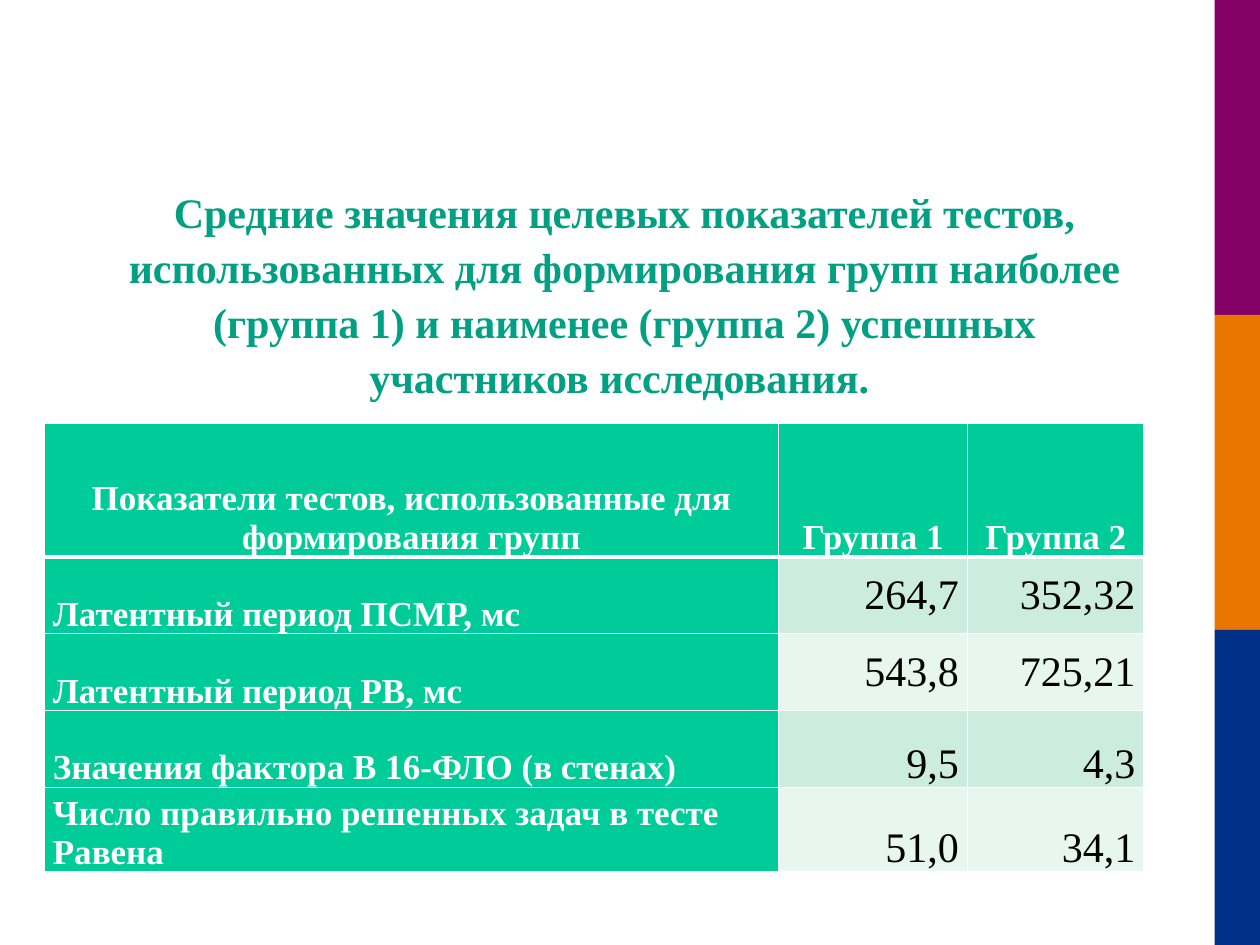
from lxml import etree
from pptx import Presentation
from pptx import util as u
from pptx.dml.color import RGBColor
from pptx.enum import shapes, text
from pptx.oxml.ns import qn

WIDTH, HEIGHT = u.Inches(10), u.Inches(7.5)
FONT = "Times New Roman"
COLORS = {
    "plum": "830065", "orange": "EA7600", "navy": "003087",
    "title": "02A082", "header": "00CC99", "odd": "CBECDE", "even": "E7F6EF",
    "white": "FFFFFF", "black": "000000",
}
TITLE = ("Средние значения целевых показателей тестов, использованных для "
         "формирования групп наиболее (группа 1) и наименее (группа 2) "
         "успешных участников исследования. ")
ROWS = [
    ("Показатели тестов, использованные для формирования групп", "Группа 1", "Группа 2"),
    ("Латентный период ПCМР, мс", "264,7", "352,32"),
    ("Латентный период РВ, мс", "543,8", "725,21"),
    ("Значения фактора В 16-ФЛО (в стенах)", "9,5", "4,3"),
    ("Число правильно решенных задач в тесте Равена", "51,0", "34,1"),
]
COLUMN_WIDTHS = [5.83, 1.5, 1.4]
ROW_HEIGHTS = [1.06, 0.61, 0.61, 0.61, 0.67]


def rgb(name):
    return RGBColor.from_string(COLORS[name])


def style(para, size, color, bold, align):
    para.alignment = align
    font = para.font
    font.name, font.size, font.bold = FONT, u.Pt(size), bold
    font.color.rgb = rgb(color)


def add_side_bands(page):
    left, band = int(WIDTH * 0.964), HEIGHT // 3
    for index, color in enumerate(("plum", "orange", "navy")):
        shape = page.shapes.add_shape(shapes.MSO_SHAPE.RECTANGLE,
                                      left, index * band, WIDTH - left, band)
        shape.shadow.inherit = False
        shape.fill.solid()
        shape.fill.fore_color.rgb = rgb(color)
        shape.line.fill.background()


def add_title(page):
    box = page.shapes.add_textbox(u.Inches(0.93), u.Inches(1.57),
                                  u.Inches(8.15), u.Inches(1.67))
    frame = box.text_frame
    frame.word_wrap = True
    frame.vertical_anchor = text.MSO_ANCHOR.BOTTOM
    frame.margin_left = 0
    para = frame.paragraphs[0]
    para.text = TITLE
    para.line_spacing = 1.09
    style(para, 24, "title", True, text.PP_ALIGN.CENTER)


def set_borders(cell, row):
    # The rule under the header row is heavier than the others
    widths = {"lnL": 1, "lnR": 1, "lnT": 3 if row == 1 else 1, "lnB": 3 if row == 0 else 1}
    properties = cell._tc.get_or_add_tcPr()
    for index, (side, width) in enumerate(widths.items()):
        line = etree.Element(qn(f"a:{side}"), w=str(u.Pt(width)))
        fill = etree.SubElement(line, qn("a:solidFill"))
        etree.SubElement(fill, qn("a:srgbClr"), val=COLORS["white"])
        properties.insert(index, line)


def fill_cell(cell, content, row, column):
    heading = row == 0 or column == 0
    cell.margin_left = cell.margin_right = u.Inches(0.07)
    cell.margin_top = cell.margin_bottom = 0
    middle = not heading and row < 3
    cell.vertical_anchor = text.MSO_ANCHOR.MIDDLE if middle else text.MSO_ANCHOR.BOTTOM
    cell.fill.solid()
    cell.fill.fore_color.rgb = rgb("header" if heading else "odd" if row % 2 else "even")
    set_borders(cell, row)
    para = cell.text_frame.paragraphs[0]
    para.text = content
    if heading:
        align = text.PP_ALIGN.LEFT if row else text.PP_ALIGN.CENTER
        style(para, 20, "white", True, align)
    else:
        style(para, 24, "black", False, text.PP_ALIGN.RIGHT)


def add_results_table(page):
    frame = page.shapes.add_table(len(ROWS), len(COLUMN_WIDTHS),
                                  u.Inches(0.35), u.Inches(3.36),
                                  u.Inches(sum(COLUMN_WIDTHS)), u.Inches(sum(ROW_HEIGHTS)))
    table = frame.table
    for column, width in zip(table.columns, COLUMN_WIDTHS):
        column.width = u.Inches(width)
    for row, height in zip(table.rows, ROW_HEIGHTS):
        row.height = u.Inches(height)
    for row, contents in enumerate(ROWS):
        for column, content in enumerate(contents):
            fill_cell(table.cell(row, column), content, row, column)


def main():
    deck = Presentation()
    deck.slide_width, deck.slide_height = WIDTH, HEIGHT
    page = deck.slides.add_slide(deck.slide_layouts[6])
    add_side_bands(page)
    add_title(page)
    add_results_table(page)
    deck.save("out.pptx")


if __name__ == "__main__":
    main()
